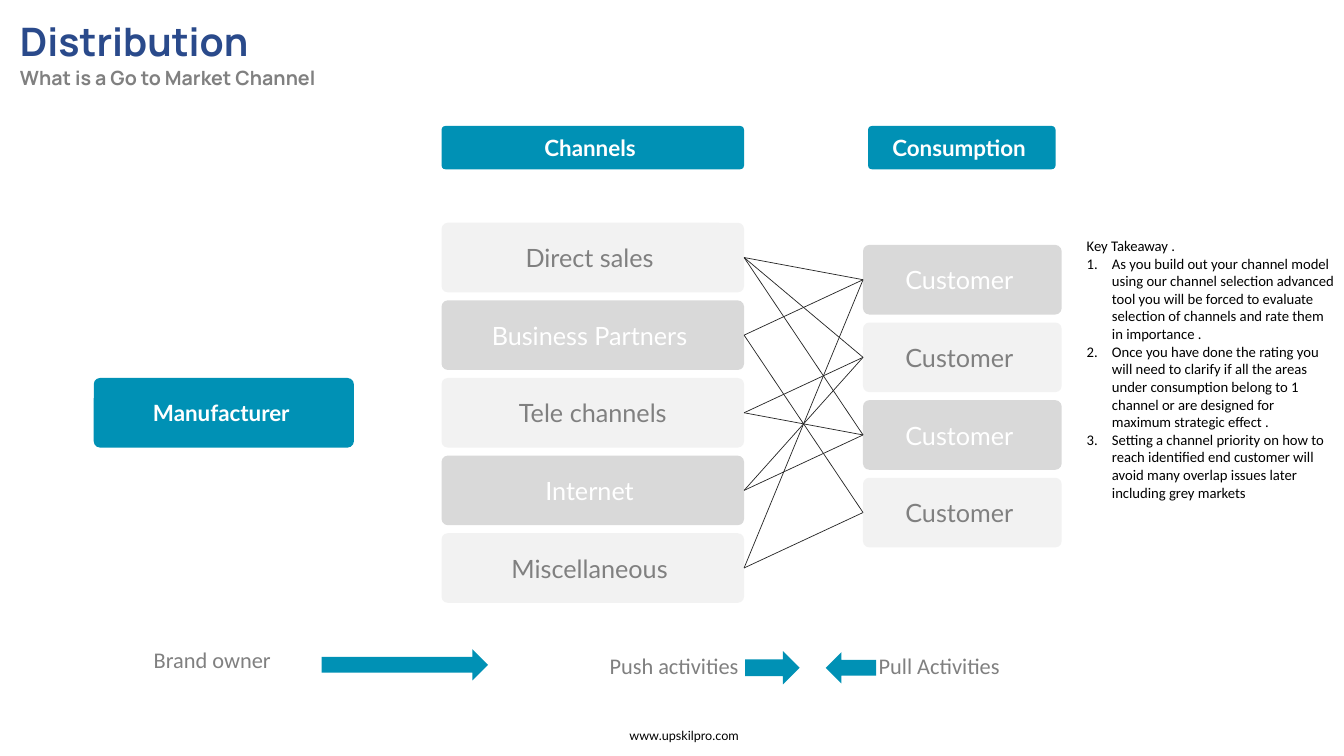
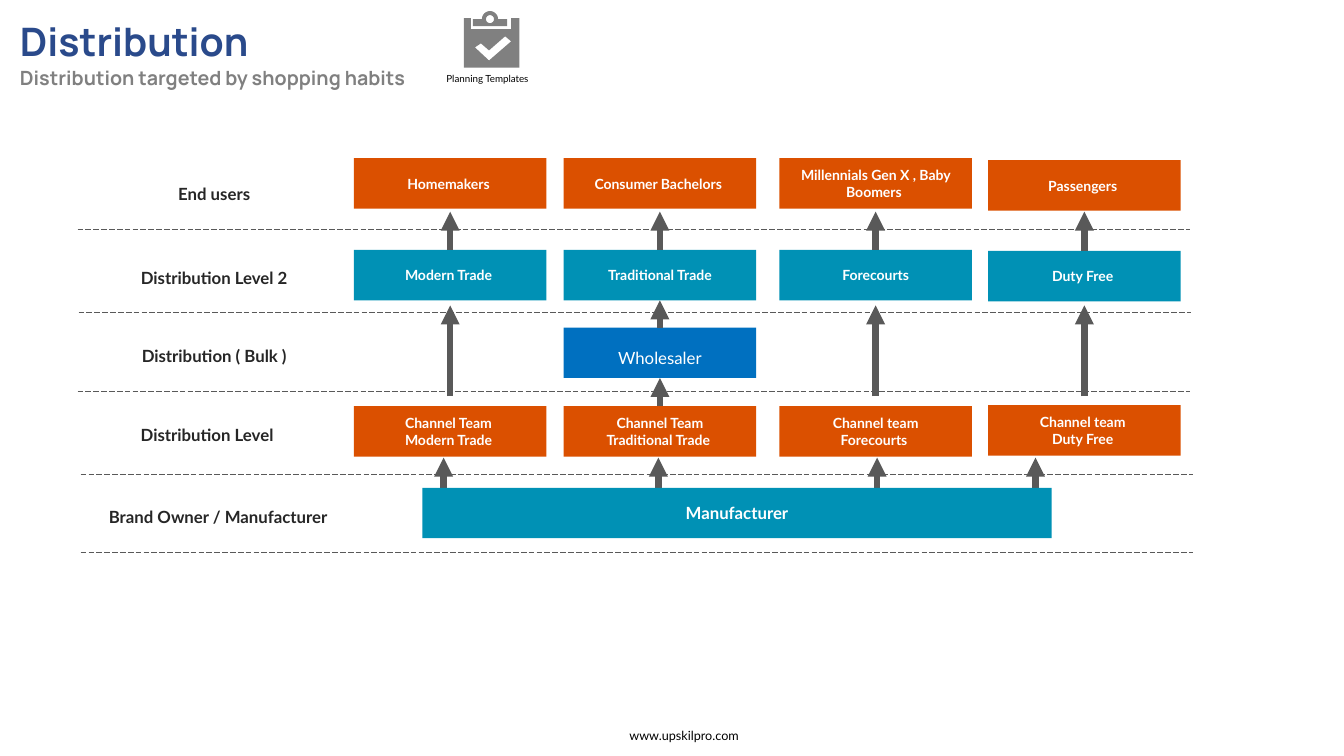
import math

from pptx import Presentation
from pptx.dml.color import RGBColor
from pptx.enum import dml, shapes, text
from pptx.util import Inches, Pt
from lxml import etree
from pptx.oxml import ns

NAVY = RGBColor(0x2A, 0x4A, 0x8B)
TEAL = RGBColor(0x00, 0x91, 0xB5)
ORANGE = RGBColor(0xDB, 0x50, 0x00)
BLUE = RGBColor(0x00, 0x70, 0xC0)
GRAY = RGBColor(0x80, 0x80, 0x80)
SILVER = RGBColor(0xD9, 0xD9, 0xD9)
PALE = RGBColor(0xF2, 0xF2, 0xF2)
SLATE = RGBColor(0x59, 0x59, 0x59)
INK = RGBColor(0x26, 0x26, 0x26)
BLACK = RGBColor(0, 0, 0)
WHITE = RGBColor(255, 255, 255)

CENTER = text.PP_ALIGN.CENTER
RECTANGLE = shapes.MSO_SHAPE.RECTANGLE
ROUNDED = shapes.MSO_SHAPE.ROUNDED_RECTANGLE
TOP, LEFT, BOTTOM, RIGHT = range(4)

COLUMNS = [3.51, 5.59, 7.73, 9.8]
CELL_WIDTH, CELL_HEIGHT = 1.91, 0.5


def add_run(paragraph, words, size, color, font="Lato", bold=False):
    run = paragraph.add_run()
    run.text = words
    run.font.size = Pt(size)
    run.font.name = font
    run.font.bold = bold
    run.font.color.rgb = color


def add_paragraphs(frame, lines, size, color, font="Lato", bold=False, align=CENTER, spacing=None):
    for index, line in enumerate(lines):
        paragraph = frame.paragraphs[0] if index == 0 else frame.add_paragraph()
        paragraph.alignment = align
        if spacing:
            paragraph.line_spacing = spacing
        add_run(paragraph, line, size, color, font, bold)


def add_text(slide, left, top, width, height):
    box = slide.shapes.add_textbox(Inches(left), Inches(top), Inches(width), Inches(height))
    box.text_frame.word_wrap = True
    box.text_frame.auto_size = text.MSO_AUTO_SIZE.SHAPE_TO_FIT_TEXT
    return box.text_frame


def paint(shape, fill):
    shape.shadow.inherit = False
    shape.fill.solid()
    shape.fill.fore_color.rgb = fill
    shape.line.fill.background()


def add_shape(slide, kind, left, top, width, height, fill):
    shape = slide.shapes.add_shape(kind, Inches(left), Inches(top), Inches(width), Inches(height))
    paint(shape, fill)
    return shape


def add_box(slide, kind, left, top, width, height, fill, lines, size, color=WHITE, bold=False):
    shape = add_shape(slide, kind, left, top, width, height, fill)
    if kind == ROUNDED:
        shape.adjustments[0] = 0.09
    frame = shape.text_frame
    frame.word_wrap = True
    frame.vertical_anchor = text.MSO_ANCHOR.MIDDLE
    add_paragraphs(frame, lines, size, color, bold=bold)
    return shape


def add_spaced_box(slide, left, top, width, fill, words, color, bold):
    shape = add_shape(slide, RECTANGLE, left, top, width, CELL_HEIGHT, fill)
    frame = shape.text_frame
    frame.word_wrap = True
    frame.vertical_anchor = text.MSO_ANCHOR.TOP
    frame.margin_left = frame.margin_right = frame.margin_top = frame.margin_bottom = 0
    add_paragraphs(frame, [words], 12, color, bold=bold, spacing=2)
    return shape


def add_line(slide, start, end, color, width):
    points = [Inches(value) for value in (*start, *end)]
    line = slide.shapes.add_connector(shapes.MSO_CONNECTOR.STRAIGHT, *points)
    line.line.color.rgb = color
    line.line.width = Pt(width)
    etree.SubElement(line._element.spPr, ns.qn("a:effectLst"))
    return line


def add_arrow(slide, x, bottom, top):
    arrow = add_line(slide, (x, bottom), (x, top), SLATE, 4.5)
    etree.SubElement(arrow.line._get_or_add_ln(), ns.qn("a:tailEnd"), type="triangle")
    return arrow


def add_outline(slide, contours, fill):
    first, *others = [[(Inches(x), Inches(y)) for x, y in contour] for contour in contours]
    builder = slide.shapes.build_freeform(*first[0])
    builder.add_line_segments(first[1:], close=True)
    for contour in others:
        builder.move_to(*contour[0])
        builder.add_line_segments(contour[1:], close=True)
    paint(builder.convert_to_shape(), fill)


def arc(x, y, radius, degrees):
    return [(x + radius * math.cos(math.radians(angle)), y - radius * math.sin(math.radians(angle)))
            for angle in range(0, degrees + 1, 15)]


def add_slide(presentation, subtitle, title_width):
    slide = presentation.slides.add_slide(presentation.slide_layouts[6])
    frame = add_text(slide, 0.1, 0.07, title_width, 0.88)
    title = frame.paragraphs[0]
    add_run(title, "Distribution", 28, NAVY, "Manrope", True)
    add_run(title, " ", 32, NAVY, "Manrope", True)
    add_run(frame.add_paragraph(), subtitle, 14, GRAY, "Manrope", True)
    footer = add_text(slide, 5.22, 7.17, 3.13, 0.25)
    add_paragraphs(footer, ["www.upskilpro.com"], 9, BLACK)
    return slide


def add_stack(slide, left, top, width, names, styles):
    return [add_box(slide, ROUNDED, left, top + 0.77 * index, width, 0.69,
                    styles[index % 2][0], [name], 18, styles[index % 2][1])
            for index, name in enumerate(names)]


def add_takeaways(slide):
    frame = add_text(slide, 10.68, 2.3, 2.65, 2.75)
    add_paragraphs(frame, [
        "Key Takeaway .",
        "As you build out your channel model using our channel selection advanced tool you will be "
        "forced to evaluate selection of channels and rate them in importance .",
        "Once you have done the rating you will need to clarify if all the areas under consumption "
        "belong to 1 channel or are designed for maximum strategic effect .",
        "Setting a channel priority on how to reach identified end customer will avoid many overlap "
        "issues later including grey markets",
    ], 10.5, BLACK, "Calibri", align=text.PP_ALIGN.LEFT)
    for paragraph in frame.paragraphs[1:]:
        properties = paragraph._p.get_or_add_pPr()
        properties.set("marL", str(Inches(0.25)))
        properties.set("indent", str(-Inches(0.25)))
        etree.SubElement(properties, ns.qn("a:buAutoNum"), type="arabicPeriod")


def build_channel_slide(presentation):
    slide = add_slide(presentation, "What is a Go to Market Channel", 3.46)
    for left, top, width, height, name in [
        (0.93, 3.75, 2.58, 0.69, "Manufacturer "),
        (4.38, 1.25, 3, 0.43, "Channels "),
        (8.61, 1.25, 1.86, 0.43, "Consumption "),
    ]:
        add_box(slide, ROUNDED, left, top, width, height, TEAL, [name], 16, bold=True)

    light, dark = (PALE, GRAY), (SILVER, WHITE)
    channels = add_stack(slide, 4.38, 2.21, 3, [
        "Direct sales ", "Business Partners ", "Tele channels", "Internet ", "Miscellaneous ",
    ], (light, dark))
    customers = add_stack(slide, 8.56, 2.43, 1.97, ["Customer "] * 4, (dark, light))
    served_customers = [(0, 1, 2), (0, 3), (1, 2), (1, 2), (0, 3)]
    for channel, served in zip(channels, served_customers):
        for index in served:
            link = add_line(slide, (7.38, 2.56), (8.56, 2.78), INK, 0.5)
            link.begin_connect(channel, RIGHT)
            link.end_connect(customers[index], LEFT)

    for left, top, width, words in [
        (8.47, 6.42, 1.74, "Pull Activities "),
        (5.65, 6.42, 2.12, "Push activities "),
        (1.07, 6.36, 2.12, "Brand owner "),
    ]:
        add_paragraphs(add_text(slide, left, top, width, 0.37), [words], 16, GRAY, "Calibri")
    right_arrow = shapes.MSO_SHAPE.RIGHT_ARROW
    add_shape(slide, right_arrow, 3.19, 6.44, 1.65, 0.31, TEAL)
    add_shape(slide, right_arrow, 7.39, 6.46, 0.54, 0.33, TEAL)
    add_shape(slide, shapes.MSO_SHAPE.LEFT_ARROW, 8.19, 6.47, 0.5, 0.31, TEAL)
    add_takeaways(slide)


def add_row(slide, top, last_top, fill, cells):
    tops = [top] * 3 + [last_top]
    return [add_box(slide, RECTANGLE, left, cell_top, CELL_WIDTH, CELL_HEIGHT, fill, lines, 10, bold=True)
            for left, cell_top, lines in zip(COLUMNS, tops, cells)]


def add_clipboard(slide):
    x, y = 4.86, 0.19
    add_outline(slide, [
        [(5.03, y), *arc(x, y, 0.08, 180), (4.69, y), (4.69, 0.26), (5.03, 0.26)],
        arc(x, y, 0.04, 345),
    ], GRAY)
    add_outline(slide, [
        [(5.07, 0.18), (5.07, 0.29), (4.67, 0.29), (4.67, 0.18),
         (4.6, 0.18), (4.6, 0.67), (5.15, 0.67), (5.15, 0.18)],
        [(4.85, 0.6), (4.71, 0.47), (4.77, 0.43), (4.85, 0.5), (5.01, 0.36), (5.07, 0.41)],
    ], GRAY)
    add_paragraphs(add_text(slide, 4.27, 0.67, 1.13, 0.22), ["Planning Templates"], 7, BLACK)


def build_habits_slide(presentation):
    slide = add_slide(presentation, "Distribution targeted by shopping habits", 4.5)
    add_clipboard(slide)
    for left, y in [(0.77, 2.28), (0.78, 3.1), (0.77, 3.88), (0.8, 4.71), (0.8, 5.48)]:
        divider = add_line(slide, (left, y), (left + 11.03, y), SLATE, 0.5)
        divider.line.dash_style = dml.MSO_LINE.LONG_DASH
    for left, top, words in [
        (0.97, 1.62, "End users"),
        (0.97, 2.46, "Distribution Level 2"),
        (0.97, 3.23, "Distribution ( Bulk )"),
        (0.9, 4.01, "Distribution Level"),
        (1.01, 4.83, "Brand Owner / Manufacturer"),
    ]:
        add_spaced_box(slide, left, top, 2.31, WHITE, words, INK, True)

    for x in (4.4, 6.53, 8.7, 10.27):
        add_arrow(slide, x, 4.92, 4.54)
    add_box(slide, RECTANGLE, 4.19, 4.84, 6.24, CELL_HEIGHT, TEAL, ["Manufacturer"], 12, bold=True)
    add_row(slide, 1.57, 1.59, ORANGE, [
        ["Homemakers "], ["Consumer Bachelors "], ["Millennials Gen X , Baby Boomers "], ["Passengers "],
    ])
    outlets = add_row(slide, 2.48, 2.49, TEAL, [
        ["Modern Trade "], ["Traditional Trade"], ["Forecourts"], ["Duty Free "],
    ])
    teams = add_row(slide, 4.03, 4.02, ORANGE, [
        ["Channel Team ", "Modern Trade "], ["Channel Team", "Traditional Trade "],
        ["Channel team", "Forecourts "], ["Channel team ", "Duty Free "],
    ])
    wholesaler = add_spaced_box(slide, COLUMNS[1], 3.25, CELL_WIDTH, BLUE, "Wholesaler", WHITE, False)

    centers = [left + CELL_WIDTH / 2 for left in COLUMNS]
    for x, outlet in zip(centers, outlets):
        add_arrow(slide, x, 2.48, 2.1).begin_connect(outlet, TOP)
    for column in (0, 2, 3):
        add_arrow(slide, centers[column], 3.93, 3.03)
    for source, target in [(teams[1], wholesaler), (wholesaler, outlets[1])]:
        arrow = add_arrow(slide, centers[1], 4.03, 3.75)
        arrow.begin_connect(source, TOP)
        arrow.end_connect(target, BOTTOM)


def main():
    presentation = Presentation()
    presentation.slide_width = Inches(13.33)
    presentation.slide_height = Inches(7.5)
    build_channel_slide(presentation)
    build_habits_slide(presentation)
    presentation.save("out.pptx")


if __name__ == "__main__":
    main()
